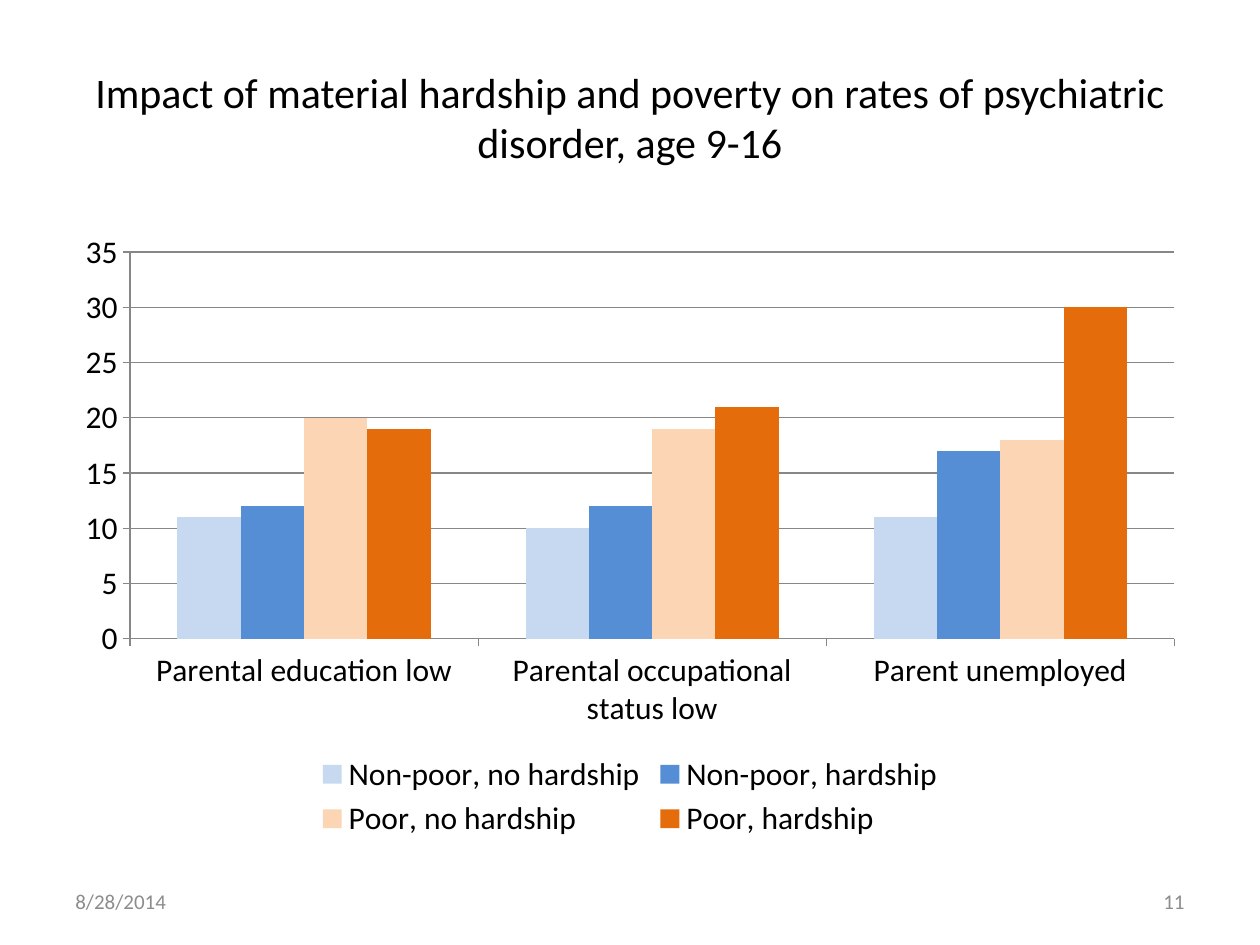
"""Build a slide that charts psychiatric disorder rates by hardship and poverty."""
from pptx import Presentation
from pptx.chart.data import CategoryChartData as ChartData
from pptx.dml.color import RGBColor
from pptx.enum.chart import XL_CHART_TYPE as Kind, XL_LEGEND_POSITION as Spot, XL_TICK_MARK as Tick
from pptx.enum.text import MSO_ANCHOR as Anchor, PP_ALIGN as Align
from pptx.util import Inches, Pt

FONT, BLACK, GREY, LINE = "Calibri", "000000", "8C8C8C", "878787"
TITLE = "Impact of material hardship and poverty on rates of psychiatric disorder, age 9-16"
TEXTS = [
    (TITLE, (0.5, 0.3, 9, 1.25), 24, BLACK, Align.CENTER),
    ("8/28/2014", (0.5, 6.95, 2.33, 0.4), 12, GREY, Align.LEFT),
    ("11", (7.17, 6.95, 2.33, 0.4), 12, GREY, Align.RIGHT),
]
GROUPS = ["Parental education low", "Parental occupational status low", "Parent unemployed"]
RATES = [
    ("Non-poor, no hardship", (11, 10, 11), "C6D9F1"),
    ("Non-poor, hardship", (12, 12, 17), "558ED5"),
    ("Poor, no hardship", (20, 19, 18), "FCD5B5"),
    ("Poor, hardship", (19, 21, 30), "E46C0A"),
]
PLACE = (0.5, 1.75, 9, 4.95)


def color(code):
    return RGBColor.from_string(code)


def style(font, size, code):
    font.name, font.size = FONT, Pt(size)
    font.color.rgb = color(code)


def rule(line):
    line.color.rgb = color(LINE)
    line.width = Pt(0.75)


def add_text(slide, text, place, size, code, align):
    frame = slide.shapes.add_textbox(*map(Inches, place)).text_frame
    frame.word_wrap = True
    frame.vertical_anchor = Anchor.MIDDLE
    para = frame.paragraphs[0]
    para.text, para.alignment = text, align
    style(para.runs[0].font, size, code)


def add_rates(slide):
    data = ChartData()
    data.categories = GROUPS
    for name, vals, _ in RATES:
        data.add_series(name, vals)
    chart = slide.shapes.add_chart(Kind.COLUMN_CLUSTERED, *map(Inches, PLACE), data).chart
    style(chart.font, 18, BLACK)
    chart.has_title = False
    chart.has_legend = True
    chart.legend.position = Spot.BOTTOM
    chart.legend.include_in_layout = False
    plot = chart.plots[0]
    plot.gap_width, plot.overlap = 150, 0
    plot.vary_by_categories = False
    for bars, (_, _, code) in zip(plot.series, RATES):
        bars.format.fill.solid()
        bars.format.fill.fore_color.rgb = color(code)
    for axis in (chart.category_axis, chart.value_axis):
        axis.major_tick_mark, axis.minor_tick_mark = Tick.OUTSIDE, Tick.NONE
        rule(axis.format.line)
    scale = chart.value_axis
    scale.minimum_scale, scale.maximum_scale, scale.major_unit = 0, 35, 5
    scale.has_major_gridlines = True
    rule(scale.major_gridlines.format.line)


def main():
    deck = Presentation()
    deck.slide_width, deck.slide_height = Inches(10), Inches(7.5)
    slide = deck.slides.add_slide(deck.slide_layouts[6])
    for item in TEXTS:
        add_text(slide, *item)
    add_rates(slide)
    deck.save("out.pptx")


if __name__ == "__main__":
    main()
